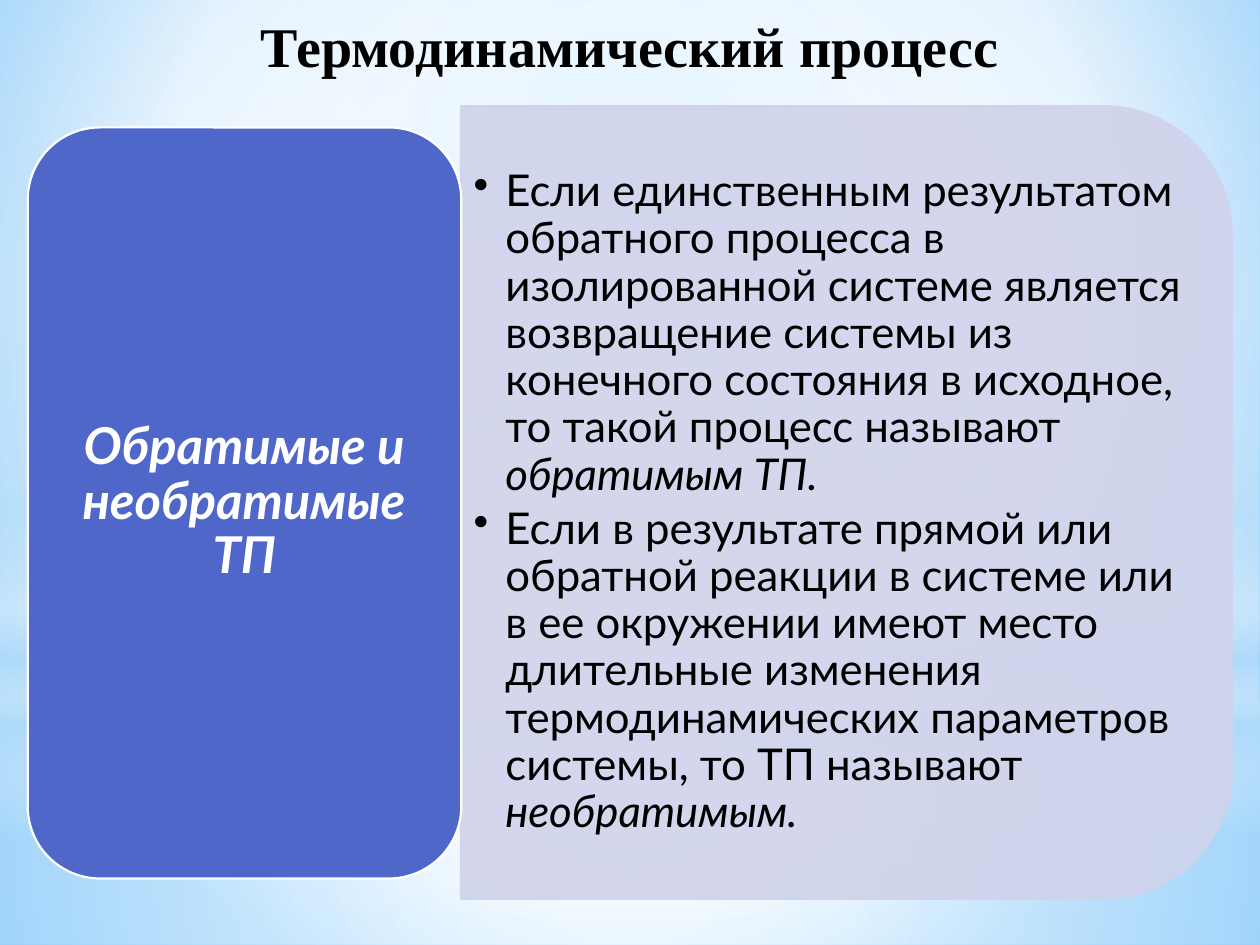
import pptx
import pptx.util
import pptx.dml.color
import pptx.enum.shapes
import pptx.enum.text
import pptx.oxml
import pptx.oxml.ns
import lxml.etree

Cm = pptx.util.Cm
Pt = pptx.util.Pt
RGBColor = pptx.dml.color.RGBColor
SHAPE = pptx.enum.shapes.MSO_SHAPE
ANCHOR = pptx.enum.text.MSO_ANCHOR
ALIGN = pptx.enum.text.PP_ALIGN
qn = pptx.oxml.ns.qn

WHITE = RGBColor(0xFF, 0xFF, 0xFF)
BLACK = RGBColor(0, 0, 0)
BLUE = RGBColor(0x4E, 0x67, 0xC8)
LAVENDER = RGBColor(0xD0, 0xD3, 0xEB)
SKY = RGBColor(0xB4, 0xDC, 0xFA)
LIGHT_BLUE = RGBColor(0x9E, 0xD5, 0xFF)
DEEP_BLUE = RGBColor(0x5B, 0xB9, 0xFF)

CENTRE = (50, 50, 50, 50)
WIDTH, HEIGHT = 25.4, 19.05

DEFINITIONS = [
    ("Если единственным результатом обратного процесса в изолированной системе "
     "является возвращение системы из конечного состояния в исходное, "
     "то такой процесс называют ", "обратимым ТП."),
    ("Если в результате прямой или обратной реакции в системе или в ее окружении "
     "имеют место длительные изменения термодинамических параметров системы, "
     "то ТП называют ", "необратимым."),
]


def set_gradient(properties, stops, focus=None):
    """Swap the solid fill for a gradient: circular round focus, else downward."""
    gradient = lxml.etree.Element(qn("a:gradFill"), rotWithShape="1")
    stop_list = lxml.etree.SubElement(gradient, qn("a:gsLst"))
    for position, color, opacity in stops:
        stop = lxml.etree.SubElement(stop_list, qn("a:gs"), pos=str(position * 1000))
        tint = lxml.etree.SubElement(stop, qn("a:srgbClr"), val=str(color))
        if opacity < 100:
            lxml.etree.SubElement(tint, qn("a:alpha"), val=str(opacity * 1000))
    if focus:
        circle = lxml.etree.SubElement(gradient, qn("a:path"), path="circle")
        edges = {side: str(edge * 1000) for side, edge in zip("ltrb", focus)}
        lxml.etree.SubElement(circle, qn("a:fillToRect"), **edges)
    else:
        lxml.etree.SubElement(gradient, qn("a:lin"), ang="5400000", scaled="0")
    properties.replace(properties.find(qn("a:solidFill")), gradient)


def add_panel(page, kind, place, color, line_color=None):
    panel = page.shapes.add_shape(kind, *map(Cm, place))
    panel.shadow.inherit = False
    panel.fill.solid()
    panel.fill.fore_color.rgb = color
    if line_color is None:
        panel.line.fill.background()
    else:
        panel.line.color.rgb = line_color
        panel.line.width = Pt(1.25)
    return panel


def add_glow(page, kind, top, height, stops, focus=None):
    glow = add_panel(page, kind, (0, top, WIDTH, height), WHITE)
    set_gradient(glow.element.spPr, stops, focus)


def set_opacity(shape, percent):
    for tint in shape.element.spPr.iter(qn("a:srgbClr")):
        lxml.etree.SubElement(tint, qn("a:alpha"), val=str(percent * 1000))


def add_text_box(page, place, margins, anchor):
    box = page.shapes.add_textbox(*map(Cm, place))
    frame = box.text_frame
    frame.word_wrap = True
    frame.vertical_anchor = anchor
    frame.margin_left = frame.margin_right = Cm(margins[0])
    frame.margin_top = frame.margin_bottom = Cm(margins[1])
    return frame


def style_paragraph(para, font, size, color, bold=None, italic=None):
    para.font.name = font
    para.font.size = Pt(size)
    para.font.color.rgb = color
    para.font.bold = bold
    para.font.italic = italic


def add_bullet(para):
    properties = para._p.get_or_add_pPr()
    properties.set("marL", str(Cm(0.64)))
    properties.set("indent", str(-Cm(0.64)))
    bullet = lxml.etree.Element(qn("a:buChar"), char="•")
    properties.insert_element_before(bullet, "a:tabLst", "a:defRPr", "a:extLst")


def add_background(page):
    page.background.fill.solid()
    page.background.fill.fore_color.rgb = WHITE
    set_gradient(page.element.find(".//" + qn("p:bgPr")),
                 [(0, LIGHT_BLUE, 100), (60, WHITE, 100), (100, DEEP_BLUE, 100)],
                 (20, 10, 20, 60))
    horizon = 14.17
    add_glow(page, SHAPE.RECTANGLE, horizon, HEIGHT - horizon,
             [(0, WHITE, 91), (37, WHITE, 76), (100, SKY, 79)], CENTRE)
    add_glow(page, SHAPE.RECTANGLE, 0, horizon,
             [(0, WHITE, 89), (48, WHITE, 62), (100, SKY, 79)], CENTRE)
    add_glow(page, SHAPE.RECTANGLE, 10.46, 6.35,
             [(0, WHITE, 0), (29, WHITE, 30), (45, SKY, 40),
              (55, WHITE, 26), (65, SKY, 60), (100, WHITE, 0)])
    add_glow(page, SHAPE.OVAL, 4.45, horizon,
             [(0, WHITE, 100), (56, WHITE, 0)], CENTRE)


def add_title(page):
    frame = add_text_box(page, (0, 0, WIDTH, 3.18), (0.25, 0.23), ANCHOR.TOP)
    para = frame.paragraphs[0]
    para.text = "Термодинамический процесс"
    para.alignment = ALIGN.CENTER
    style_paragraph(para, "Times New Roman", 32, BLACK, bold=True)


def add_definitions(page):
    panel = add_panel(page, SHAPE.ROUND_2_SAME_RECTANGLE,
                      (9.07, 2.36, 15.98, 15.54), LAVENDER, LAVENDER)
    panel.rotation = 90
    set_opacity(panel, 90)
    frame = add_text_box(page, (9.3, 2.9, 14.78, 14.48), (0.25, 0.13), ANCHOR.MIDDLE)
    for number, (statement, term) in enumerate(DEFINITIONS):
        para = frame.add_paragraph() if number else frame.paragraphs[0]
        para.line_spacing = 0.9
        para.space_after = Pt(4)
        add_bullet(para)
        style_paragraph(para, "Lato", 25, BLACK)
        para.add_run().text = statement
        span = para.add_run()
        span.text = term
        span.font.italic = True


def add_topic(page):
    add_panel(page, SHAPE.ROUNDED_RECTANGLE, (0.56, 2.57, 8.74, 15.14), BLUE, WHITE)
    frame = add_text_box(page, (0.99, 3, 7.87, 14.27), (0.3, 0.15), ANCHOR.MIDDLE)
    para = frame.paragraphs[0]
    para.text = "Обратимые и необратимые ТП"
    para.alignment = ALIGN.CENTER
    para.line_spacing = 0.9
    style_paragraph(para, "Lato", 29, WHITE, bold=True, italic=True)


def main():
    deck = pptx.Presentation()
    deck.slide_width, deck.slide_height = Cm(WIDTH), Cm(HEIGHT)
    page = deck.slides.add_slide(deck.slide_layouts[6])
    add_background(page)
    add_title(page)
    add_definitions(page)
    add_topic(page)
    deck.save("out.pptx")


if __name__ == "__main__":
    main()
